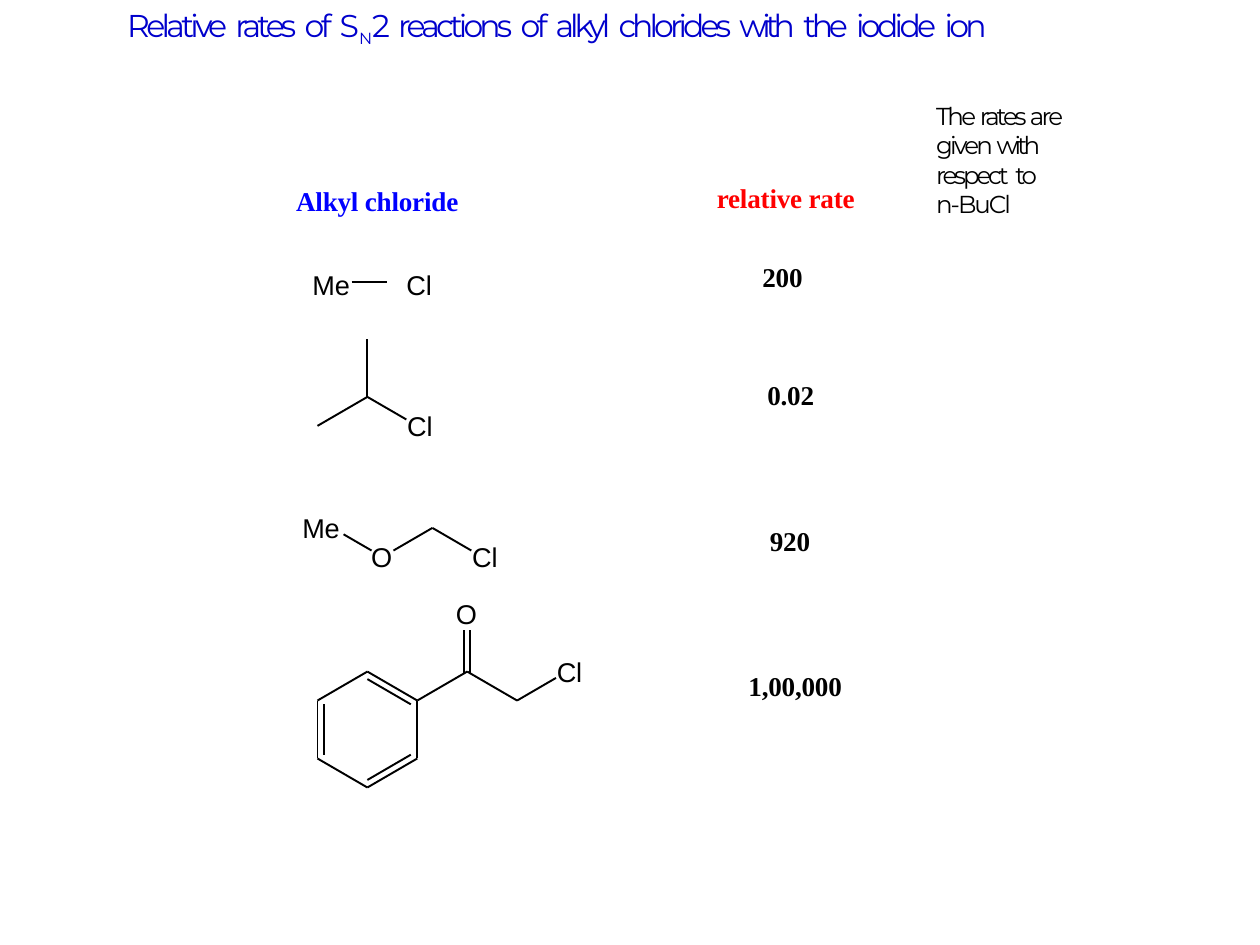
import pptx
import pptx.dml.color
import pptx.enum.shapes
import pptx.oxml
import pptx.oxml.ns
import pptx.util

COLORS = {"title": "0000CC", "chloride": "0000FF", "rate": "FF0000", "ink": "000000"}
COLUMNS, ROWS = 100, 75
HEX_COLUMN, HEX_ROW = 3.96, 2.3
ATOM_GAP = 0.22
RING_INSET = 0.87

deck = pptx.Presentation()
deck.slide_width = pptx.util.Inches(10)
deck.slide_height = pptx.util.Inches(7.5)
slide = deck.slides.add_slide(deck.slide_layouts[6])

HEADING = {"name": "Times New Roman", "size": pptx.util.Pt(15.5), "bold": True}
ATOM = {"name": "Arial", "size": pptx.util.Pt(15.5), "bold": False}
TITLE = {"name": "Montserrat", "size": pptx.util.Pt(18)}
NOTE = {"name": "Montserrat", "size": pptx.util.Pt(14)}
FRAME = {"word_wrap": True, "margin_left": 0, "margin_right": 0,
         "margin_top": pptx.util.Inches(0.01), "margin_bottom": 0}
ATOM_BOXES = {"Cl": (0.9, 2.3), "O": (1, 1.9), "Me": (2.5, 3.3)}


def across(columns):
    return round(deck.slide_width * columns / COLUMNS)


def down(rows):
    return round(deck.slide_height * rows / ROWS)


def apply(target, values):
    for name, value in values.items():
        setattr(target, name, value)


def write(paragraph, words, style, color, before=0.9):
    paragraph.space_before = pptx.util.Pt(before)
    properties = paragraph._p.get_or_add_pPr()
    properties.set("marL", str(across(0.1)))
    properties.set("indent", "0")
    for text, spacing, *baseline in words:
        run = paragraph.add_run()
        run.text = text
        apply(run.font, style)
        run.font.color.rgb = pptx.dml.color.RGBColor.from_string(COLORS[color])
        run._r.get_or_add_rPr().set("spc", str(round(spacing * 100)))
        if baseline:
            run.font.size = pptx.util.Pt(15.8)
            run._r.get_or_add_rPr().set("baseline", str(baseline[0] * 1000))


def text_box(box, words, style, color, before=0.9):
    left, top, width, height = box
    frame = slide.shapes.add_textbox(
        across(left), down(top), across(width), down(height)).text_frame
    apply(frame, FRAME)
    write(frame.paragraphs[0], words, style, color, before)
    return frame


def bond(start, end):
    line = slide.shapes.add_connector(
        pptx.enum.shapes.MSO_CONNECTOR.STRAIGHT,
        across(start[0]), down(start[1]), across(end[0]), down(end[1]))
    line.line.width = pptx.util.Pt(1.1)
    line.line.color.rgb = pptx.dml.color.RGBColor.from_string(COLORS["ink"])
    line._element.spPr.append(pptx.oxml.parse_xml(
        "<a:effectLst %s/>" % pptx.oxml.ns.nsdecls("a")))


def toward(start, end, share):
    return tuple(a + (b - a) * share for a, b in zip(start, end))


def molecule(origin, atoms, bonds):
    def place(node):
        return origin[0] + node[0] * HEX_COLUMN, origin[1] + node[1] * HEX_ROW

    for start, end in bonds:
        bond(place(toward(start, end, ATOM_GAP if start in atoms else 0)),
             place(toward(end, start, ATOM_GAP if end in atoms else 0)))
    for node, symbol in atoms.items():
        x, y = place(node)
        offset, width = ATOM_BOXES[symbol]
        text_box((x - offset, y - 1.4, width, 2.8), [(symbol, -0.1)], ATOM, "ink")


def benzene(origin):
    center = (1, 2)
    corners = [(0, 1), (0, 3), (1, 4), (2, 3), (2, 1), (1, 0)]
    sides = list(zip(corners, corners[1:] + corners[:1]))
    inner = [tuple(toward(center, corner, RING_INSET) for corner in side)
             for side in sides[::2]]
    molecule(origin, {}, sides + inner)


def carbonyl(origin):
    x, y = origin[0] + 3 * HEX_COLUMN, origin[1]
    for shift in (-0.25, 0.25):
        bond((x + shift, y + 0.2), (x + shift, y - 3.3))


def title(box):
    words = [("Relative ", -2.1), ("rates ", -2.2), ("of ", -2), ("S", -1.4),
             ("N", -2.1, -24), ("2 ", -1.4), ("reactions ", -2.2), ("of ", -2),
             ("alkyl ", -2.3), ("chlorides ", -2.2), ("with ", -2.8),
             ("the ", -2.4), ("iodide ", -2.1), ("ion", -2.1)]
    spaced = []
    for text, *style in words:
        spaced.append((text.rstrip(), *style))
        if text.endswith(" "):
            spaced.append((" ", 0))
    text_box(box, spaced, TITLE, "title", 1)


def chlorides(box):
    left, top = box[:2]
    text_box(box, [("Alkyl chloride", -0.1)], HEADING, "chloride")
    molecule((left + 3.8, top + 8.1), {(0, 0): "Me", (1.48, 0): "Cl"}, [])
    bond((left + 4.5, top + 7.9), (left + 7.3, top + 7.9))
    molecule((left + 1.8, top + 12.4), {(2, 3): "Cl"},
             [((0, 3), (1, 2)), ((1, 2), (2, 3)), ((1, 2), (1, 0))])
    molecule((left + 3, top + 27.4), {(0, 0): "Me", (1, 1): "O", (3, 1): "Cl"},
             [((0, 0), (1, 1)), ((1, 1), (2, 0)), ((2, 0), (3, 1))])
    ketone = (left + 1.8, top + 38.8)
    benzene(ketone)
    carbonyl(ketone)
    molecule(ketone, {(3, -2): "O", (5, 0): "Cl"},
             [((2, 1), (3, 0)), ((3, 0), (4, 1)), ((4, 1), (5, 0))])


def rates(box):
    left, top = box[:2]
    text_box(box, [("relative rate", -0.1)], HEADING, "rate")
    for rate, x, y, width in (("200", 3.6, 6.3, 3.5), ("0.02", 4, 15.6, 4),
                              ("920", 4.2, 27.2, 3.5), ("1,00,000", 2.5, 38.7, 7.8)):
        text_box((left + x, top + y, width, 2.8), [(rate, -0.1)], HEADING, "ink")


def note(box):
    words = [("The ", -1.6), ("rates ", -1.8), ("are given ", -1.6),
             ("with ", -2.1), ("respect", -1.8), (" ", 0), ("to", -1.9)]
    frame = text_box(box, words, NOTE, "ink", 1.1)
    write(frame.add_paragraph(), [("n-BuCl", -1.2)], NOTE, "ink", 0)


title((10, 0.4, 73.7, 3.3))
chlorides((23.4, 14.5, 13.3, 2.8))
rates((56.8, 14.3, 11.4, 2.8))
note((74.2, 7.9, 11.9, 9.6))
deck.save("out.pptx")
